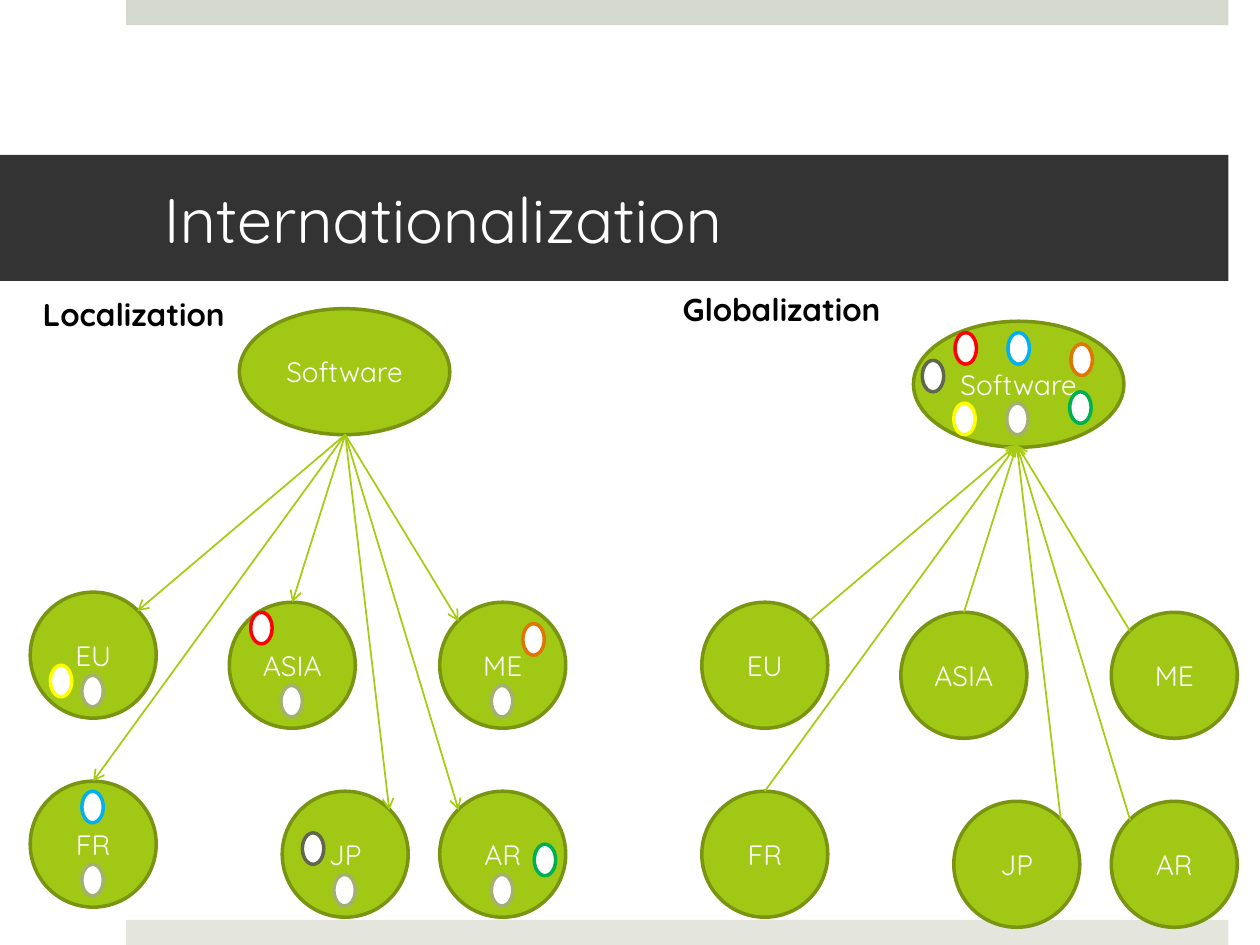
from lxml.etree import SubElement
from pptx import Presentation
from pptx.dml.color import RGBColor
from pptx.enum.shapes import MSO_CONNECTOR as Connector, MSO_SHAPE as Shape
from pptx.enum.text import MSO_ANCHOR as Anchor, MSO_AUTO_SIZE as AutoSize, PP_ALIGN as Align
from pptx.oxml.ns import qn
from pptx.util import Emu, Pt

EMU_PER_PX = 9144
FONT = "Quicksand"
NODE, DOT_WIDTH, DOT_HEIGHT = 100, 17, 25
DIAGONAL_INSET = 15
COLORS = {
    "top_bar": "D6D9CD", "bottom_bar": "E4E6DE", "band": "333333",
    "white": "FFFFFF", "black": "000000",
    "node": "A2C816", "node_line": "789410", "arrow": "A5CC12",
    "common": "A2B170", "ME": "E07602", "EU": "FFFF00", "ASIA": "FF0000",
    "FR": "00B0F0", "JP": "61674F", "AR": "00B050",
}
REGIONS = {
    "EU": (24, 470, "right"), "FR": (24, 620, "top"), "ASIA": (182, 478, "top"),
    "JP": (224, 628, "right"), "AR": (349, 628, "left"), "ME": (349, 478, "left"),
}
LOCAL_DOTS = {
    "ME": (415, 495), "EU": (40, 528), "ASIA": (199, 486),
    "FR": (65, 628), "JP": (240, 661), "AR": (424, 670),
}
GLOBAL_DOTS = {
    "common": (799, 320), "ME": (850, 273), "EU": (757, 320), "ASIA": (758, 264),
    "FR": (800, 264), "JP": (732, 286), "AR": (849, 311),
}


def px(*lengths):
    """Turn whole pixel lengths into EMU."""
    return [Emu(length * EMU_PER_PX) for length in lengths]


def color(name):
    """Look up a named colour."""
    return RGBColor.from_string(COLORS[name])


def set_font(para, size, name, bold=False):
    """Format a whole paragraph."""
    font = para.font
    font.name, font.size, font.bold = FONT, Pt(size), bold
    font.color.rgb = color(name)


def add_filled(page, kind, bounds, fill, line=None):
    """Add a flat preset shape with an optional outline."""
    shape = page.shapes.add_shape(kind, *px(*bounds))
    shape.shadow.inherit = False
    shape.fill.solid()
    shape.fill.fore_color.rgb = color(fill)
    if line:
        shape.line.color.rgb = color(line)
        shape.line.width = Pt(2)
    else:
        shape.line.fill.background()
    return shape


def add_node(page, text, left, top, width=NODE):
    """Add a labelled green ellipse."""
    node = add_filled(page, Shape.OVAL, (left, top, width, NODE), "node", "node_line")
    frame = node.text_frame
    frame.vertical_anchor = Anchor.MIDDLE
    para = frame.paragraphs[0]
    para.text, para.alignment = text, Align.CENTER
    set_font(para, 16, "white")
    return node


def add_dot(page, name, left, top):
    """Add a small white locale marker."""
    add_filled(page, Shape.OVAL, (left, top, DOT_WIDTH, DOT_HEIGHT), "white", name)


def add_arrow(page, hub, node, spot, end):
    """Link the hub point to a spot on a node, with an arrowhead at one end."""
    scale = EMU_PER_PX
    left, top = round(node.left / scale), round(node.top / scale)
    across = {"left": DIAGONAL_INSET, "top": NODE // 2, "right": NODE - DIAGONAL_INSET}[spot]
    down = 0 if spot == "top" else DIAGONAL_INSET
    line = page.shapes.add_connector(
        Connector.STRAIGHT, *px(*hub, left + across, top + down))
    if spot == "top":
        line.end_connect(node, 0)
    line.line.color.rgb = color("arrow")
    line.line.width = Pt(1)
    SubElement(line.line._get_or_add_ln(), qn(f"a:{end}"), type="arrow")
    SubElement(line._element.spPr, qn("a:effectLst"))


def add_regions(page, shift_x, shift_y, end):
    """Add the six region nodes and their arrows, shifted as a group."""
    hub = (274 + shift_x, 345 + shift_y)
    for name, (left, top, spot) in REGIONS.items():
        node = add_node(page, name, left + shift_x, top + shift_y)
        add_arrow(page, hub, node, spot, end)


def add_heading(page, text, bounds):
    """Add a bold heading above a diagram."""
    box = page.shapes.add_textbox(*px(*bounds))
    frame = box.text_frame
    frame.word_wrap = True
    frame.auto_size = AutoSize.SHAPE_TO_FIT_TEXT
    para = frame.paragraphs[0]
    para.text = text
    set_font(para, 18, "black", bold=True)


def set_title(page, text):
    """Turn the title placeholder into the dark band."""
    title = page.shapes.title
    title.left, title.top, title.width, title.height = px(0, 123, 975, 100)
    title.fill.solid()
    title.fill.fore_color.rgb = color("band")
    frame = title.text_frame
    frame.auto_size = AutoSize.NONE
    frame.vertical_anchor = Anchor.MIDDLE
    frame.margin_left, frame.margin_top, frame.margin_right, frame.margin_bottom = px(
        130, 5, 30, 5)
    para = frame.paragraphs[0]
    para.text, para.alignment = text, Align.LEFT
    set_font(para, 36, "white")


def add_localization(page):
    """Draw software adapted separately in each region."""
    add_node(page, "Software", 190, 245, 167)
    add_regions(page, 0, 0, "tailEnd")
    for left, top, _ in REGIONS.values():
        add_dot(page, "common", left + 41, top + 66)
    for name, spot in LOCAL_DOTS.items():
        add_dot(page, name, *spot)
    add_heading(page, "Localization", (24, 229, 175, 40))


def add_globalization(page):
    """Draw software that holds every locale itself."""
    add_node(page, "Software", 725, 255, 167)
    add_regions(page, 533, 8, "headEnd")
    for name, spot in GLOBAL_DOTS.items():
        add_dot(page, name, *spot)
    add_heading(page, "Globalization", (532, 225, 183, 40))


def main():
    """Build and save the slide."""
    deck = Presentation()
    deck.slide_width, deck.slide_height = px(1000, 750)
    page = deck.slides.add_slide(deck.slide_layouts[5])
    add_filled(page, Shape.RECTANGLE, (100, 0, 875, 20), "top_bar")
    add_filled(page, Shape.RECTANGLE, (100, 730, 875, 20), "bottom_bar")
    set_title(page, "Internationalization")
    add_localization(page)
    add_globalization(page)
    deck.save("out.pptx")


if __name__ == "__main__":
    main()
